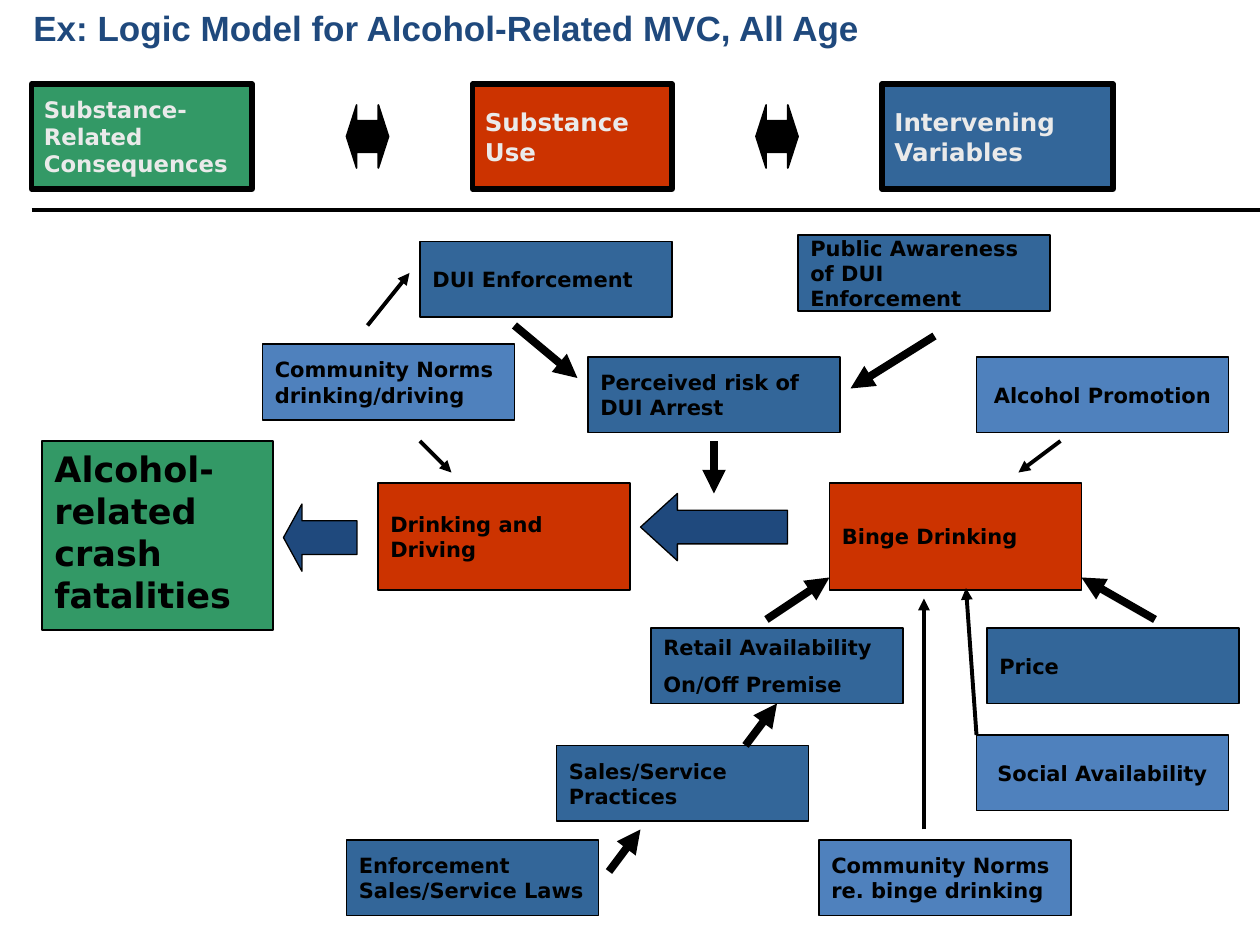
from dataclasses import dataclass
from lxml.etree import SubElement
from pptx import Presentation
from pptx.dml.color import RGBColor
from pptx.enum.shapes import MSO_CONNECTOR, MSO_SHAPE
from pptx.enum.text import MSO_ANCHOR, PP_ALIGN
from pptx.oxml.ns import qn
from pptx.util import Inches, Pt


@dataclass(frozen=True)
class Theme:
    consequence: str = "339966"
    use: str = "CC3300"
    variable: str = "336699"
    norm: str = "4F81BD"
    navy: str = "1F497D"
    black: str = "000000"
    pale: str = "EAEAEA"
    title_font: str = "Arial"
    body_font: str = "DejaVu Sans"
    large: int = 20
    heading: int = 14
    long_heading: int = 13
    body: int = 12
    gap: float = 6.5


theme = Theme()
prs = Presentation()
prs.slide_width, prs.slide_height = Inches(10), Inches(7.5)
COL, ROW = prs.slide_width // 120, prs.slide_height // 90
slide = prs.slides.add_slide(prs.slide_layouts[6])


def add_block(kind, col, row, cols, rows, fill, border):
    block = slide.shapes.add_shape(
        kind, int(col * COL), int(row * ROW), int(cols * COL), int(rows * ROW))
    block.shadow.inherit = False
    block.fill.solid()
    block.fill.fore_color.rgb = RGBColor.from_string(fill)
    block.line.color.rgb = RGBColor.from_string(theme.black)
    block.line.width = Pt(border)
    return block


def write(holder, lines, size, color, font=theme.body_font, anchor=MSO_ANCHOR.MIDDLE,
          align=PP_ALIGN.LEFT, gap=0):
    frame = holder.text_frame
    frame.word_wrap = True
    frame.vertical_anchor = anchor
    for index, line in enumerate(lines):
        paragraph = frame.add_paragraph() if index else frame.paragraphs[0]
        paragraph.alignment = align
        paragraph.space_before = Pt(gap if index else 0)
        run = paragraph.add_run()
        run.text = line
        run.font.name = font
        run.font.size = Pt(size)
        run.font.bold = True
        run.font.color.rgb = RGBColor.from_string(color)


title = slide.shapes.add_textbox(2 * COL, 0, 118 * COL, int(8.4 * ROW))
write(title, ["Ex: Logic Model for Alcohol-Related MVC, All Age"], theme.large,
      theme.navy, theme.title_font, MSO_ANCHOR.TOP)

headings = [
    (3, 21, theme.consequence, theme.long_heading, ["Substance-Related Consequences"]),
    (45, 19, theme.use, theme.heading, ["Substance", "Use"]),
    (84, 22, theme.variable, theme.heading, ["Intervening Variables"]),
]
for col, cols, fill, size, lines in headings:
    heading = add_block(MSO_SHAPE.RECTANGLE, col, 8, cols, 10, fill, 3)
    write(heading, lines, size, theme.pale)

block_arrows = [
    (MSO_SHAPE.LEFT_RIGHT_ARROW, 33, 10, 4, 6, 0.241, theme.black, 1),
    (MSO_SHAPE.LEFT_RIGHT_ARROW, 72, 10, 4, 6, 0.241, theme.black, 1),
    (MSO_SHAPE.LEFT_ARROW, 61, 47, 14, 6.4, 0.549, theme.navy, 0.75),
    (MSO_SHAPE.LEFT_ARROW, 27, 48, 7, 6.4, 0.275, theme.navy, 0.75),
]
for kind, col, row, cols, rows, head, fill, border in block_arrows:
    arrow = add_block(kind, col, row, cols, rows, fill, border)
    arrow.adjustments[0] = 0.5
    arrow.adjustments[1] = head

outcome = add_block(MSO_SHAPE.RECTANGLE, 4, 42, 22, 18, theme.consequence, 1)
write(outcome, ["Alcohol-related crash fatalities"], theme.large, theme.black,
      anchor=MSO_ANCHOR.TOP)

USE_ROWS, FACTOR_ROWS = 10.2, 7.2
LEFT, CENTER = PP_ALIGN.LEFT, PP_ALIGN.CENTER
factors = [
    (79, 46, USE_ROWS, theme.use, LEFT, ["Binge Drinking"]),
    (36, 46, USE_ROWS, theme.use, LEFT, ["Drinking and Driving"]),
    (93, 70, FACTOR_ROWS, theme.norm, CENTER, ["Social Availability"]),
    (56, 34, FACTOR_ROWS, theme.variable, LEFT, ["Perceived risk of DUI Arrest"]),
    (25, 32.8, FACTOR_ROWS, theme.norm, LEFT, ["Community Norms drinking/driving"]),
    (40, 23, FACTOR_ROWS, theme.variable, LEFT, ["DUI Enforcement"]),
    (93, 34, FACTOR_ROWS, theme.norm, CENTER, ["Alcohol Promotion"]),
    (76, 22.4, FACTOR_ROWS, theme.variable, LEFT, ["Public Awareness of DUI Enforcement"]),
    (78, 80, FACTOR_ROWS, theme.norm, LEFT, ["Community Norms re. binge drinking"]),
    (62, 59.8, FACTOR_ROWS, theme.variable, LEFT, ["Retail Availability", "On/Off Premise"]),
    (94, 59.8, FACTOR_ROWS, theme.variable, LEFT, ["Price"]),
    (53, 71, FACTOR_ROWS, theme.variable, LEFT, ["Sales/Service Practices"]),
    (33, 80, FACTOR_ROWS, theme.variable, LEFT, ["Enforcement Sales/Service Laws"]),
]
for col, row, rows, fill, align, lines in factors:
    factor = add_block(MSO_SHAPE.RECTANGLE, col, row, 24, rows, fill, 1)
    write(factor, lines, theme.body, theme.black, align=align, gap=theme.gap)

THIN, THICK = 2.25, 4.5
links = [
    (3, 20, 120, 20, THIN, False),
    (68, 42, 68, 47, THICK, True),
    (89, 32, 81, 37, THICK, True),
    (49, 31, 55, 36, THICK, True),
    (35, 31, 39, 26, THIN, True),
    (40, 42, 43, 45, THIN, True),
    (73, 59, 79, 55, THICK, True),
    (110, 59, 103, 55, THICK, True),
    (93, 70, 92, 56, THIN, True),
    (88, 79, 88, 57, THIN, True),
    (71, 71, 74, 67, THICK, True),
    (101, 42, 97, 45, THIN, True),
    (58, 83, 61, 79, THICK, True),
]
for from_col, from_row, to_col, to_row, weight, pointed in links:
    link = slide.shapes.add_connector(
        MSO_CONNECTOR.STRAIGHT, from_col * COL, from_row * ROW, to_col * COL, to_row * ROW)
    link.line.color.rgb = RGBColor.from_string(theme.black)
    link.line.width = Pt(weight)
    if pointed:
        SubElement(link.line._get_or_add_ln(), qn("a:tailEnd"), type="triangle")
    SubElement(link._element.spPr, qn("a:effectLst"))

prs.save("out.pptx")
